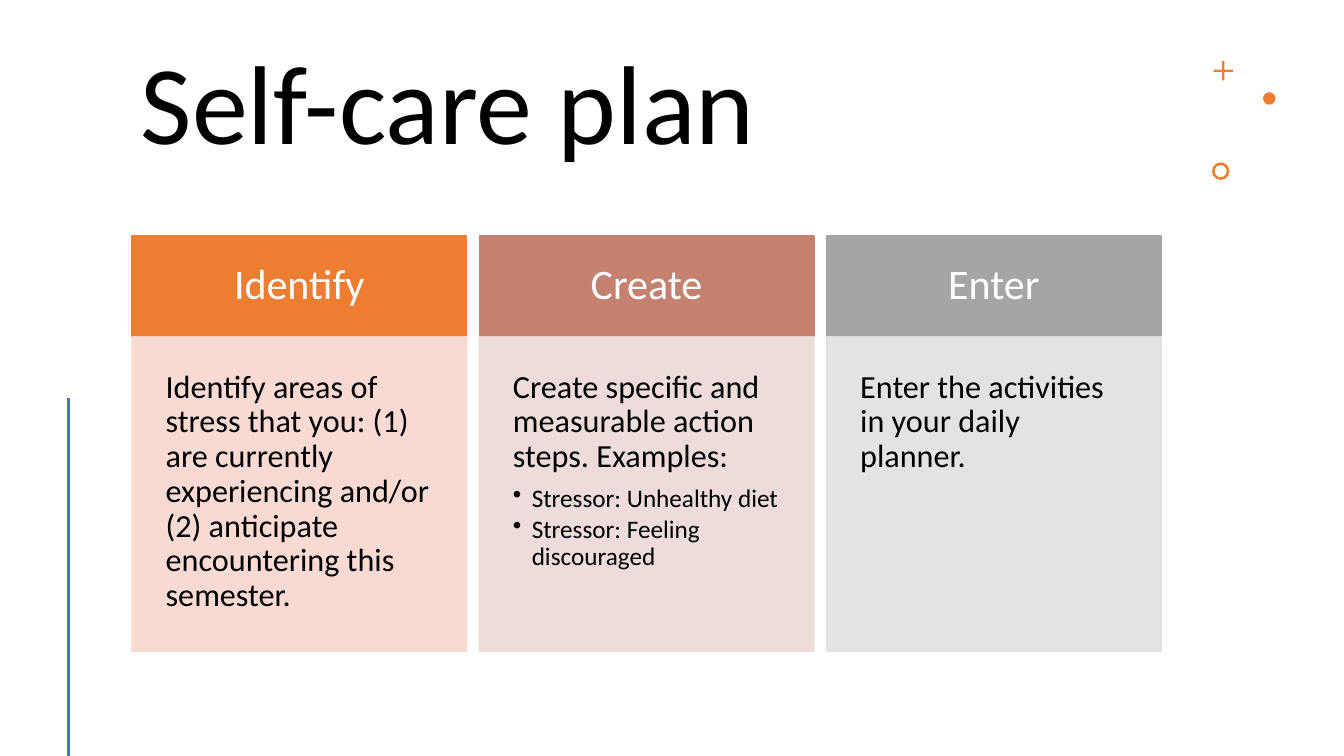
from lxml.etree import SubElement
from pptx import Presentation
from pptx.dml.color import RGBColor
from pptx.enum.shapes import MSO_CONNECTOR, MSO_SHAPE
from pptx.enum.text import MSO_ANCHOR, PP_ALIGN
from pptx.oxml.ns import qn
from pptx.util import Pt

COLOURS = {
    "orange": "ED7D31", "orange tint": "F8D7CE",
    "rose": "C48170", "rose tint": "EDD9D7",
    "grey": "A5A5A5", "grey tint": "E1E1E1",
    "blue": "4472C4", "black": "000000", "white": "FFFFFF",
}

# Text formats: size, colour, space after, paragraph alignment
TITLE = {"size": 80, "colour": "black", "after": 0, "align": PP_ALIGN.LEFT}
HEADING = {"size": 30, "colour": "white", "after": 0, "align": PP_ALIGN.CENTER}
BODY = {"size": 23, "colour": "black", "after": 8, "align": PP_ALIGN.LEFT}
BULLET = {"size": 18, "colour": "black", "after": 2.7, "align": PP_ALIGN.LEFT,
          "indent": 13.5}

# Heading, colour, body text, bullets
STEPS = [
    ("Identify", "orange",
     "Identify areas of stress that you: (1) are currently experiencing "
     "and/or (2) anticipate encountering this semester.", []),
    ("Create", "rose",
     "Create specific and measurable action steps. Examples:",
     ["Stressor: Unhealthy diet", "Stressor: Feeling discouraged"]),
    ("Enter", "grey", "Enter the activities in your daily planner.", []),
]

COLUMN_LEFT, COLUMN_PITCH, COLUMN_WIDTH = 94.3, 248.05, 239
HEADING_TOP, HEADING_HEIGHT, BODY_HEIGHT = 168.5, 72, 224.6


def colour(name):
    return RGBColor.from_string(COLOURS[name])


def add_bullet(para, indent):
    properties = para._p.get_or_add_pPr()
    properties.set("marL", str(Pt(indent)))
    properties.set("indent", str(-Pt(indent)))
    SubElement(properties, qn("a:buChar")).set("char", "•")


def write(box, paragraphs, anchor, margin_x, margin_y):
    frame = box.text_frame
    settings = {"word_wrap": True, "vertical_anchor": anchor,
                "margin_left": Pt(margin_x), "margin_right": Pt(margin_x),
                "margin_top": Pt(margin_y), "margin_bottom": Pt(margin_y)}
    for name, value in settings.items():
        setattr(frame, name, value)
    for index, (text, style) in enumerate(paragraphs):
        para = frame.add_paragraph() if index else frame.paragraphs[0]
        layout = {"alignment": style["align"], "line_spacing": 0.9,
                  "space_after": Pt(style["after"])}
        for name, value in layout.items():
            setattr(para, name, value)
        if "indent" in style:
            add_bullet(para, style["indent"])
        span = para.add_run()
        span.text = text
        for name, value in {"name": "Calibri", "size": Pt(style["size"])}.items():
            setattr(span.font, name, value)
        span.font.color.rgb = colour(style["colour"])


def add_figure(page, kind, left, top, width, height, fill):
    shape = page.shapes.add_shape(kind, Pt(left), Pt(top), Pt(width), Pt(height))
    shape.shadow.inherit = False
    shape.fill.solid()
    shape.fill.fore_color.rgb = colour(fill)
    shape.line.fill.background()
    return shape


def add_panel(page, left, top, height, fill, opacity=100):
    panel = add_figure(page, MSO_SHAPE.RECTANGLE, left, top, COLUMN_WIDTH, height, fill)
    panel.line.color.rgb = colour(fill)
    panel.line.width = Pt(1)
    if opacity < 100:
        for tone in panel._element.spPr.iter(qn("a:srgbClr")):
            SubElement(tone, qn("a:alpha")).set("val", str(opacity * 1000))
    return panel


def add_step(page, index, heading, tone, text, bullets):
    left = COLUMN_LEFT + index * COLUMN_PITCH
    head = add_panel(page, left, HEADING_TOP, HEADING_HEIGHT, tone)
    write(head, [(heading, HEADING)], MSO_ANCHOR.MIDDLE, 18.5, 18.5)
    body = add_panel(page, left, HEADING_TOP + HEADING_HEIGHT, BODY_HEIGHT,
                     tone + " tint", 90)
    paragraphs = [(text, BODY)] + [(bullet, BULLET) for bullet in bullets]
    write(body, paragraphs, MSO_ANCHOR.TOP, 24, 24)


def add_rule(page, x, top, bottom):
    rule = page.shapes.add_connector(MSO_CONNECTOR.STRAIGHT, Pt(x), Pt(top), Pt(x), Pt(bottom))
    rule.line.color.rgb = colour("blue")
    rule.line.width = Pt(2)
    SubElement(rule._element.spPr, qn("a:effectLst"))


def main():
    deck = Presentation()
    deck.slide_width, deck.slide_height = Pt(960), Pt(540)
    page = deck.slides.add_slide(deck.slide_layouts[6])

    # Title
    title = page.shapes.add_textbox(Pt(93.6), Pt(30.2), Pt(736.6), Pt(94.3))
    write(title, [("Self-care plan", TITLE)], MSO_ANCHOR.MIDDLE, 7.2, 3.6)

    # Corner ornaments: plus, dot and ring
    plus = add_figure(page, MSO_SHAPE.CROSS, 866.9, 43.7, 13.7, 13.7, "orange")
    plus.adjustments[0] = 0.44
    add_figure(page, MSO_SHAPE.OVAL, 902.2, 65.9, 8.9, 8.9, "orange")
    ring = add_figure(page, MSO_SHAPE.DONUT, 865.7, 116, 12.5, 12.5, "orange")
    ring.adjustments[0] = 0.15

    # Left rule
    add_rule(page, 49, 284, 540)

    # Step columns
    for index, step in enumerate(STEPS):
        add_step(page, index, *step)

    deck.save("out.pptx")


if __name__ == "__main__":
    main()
